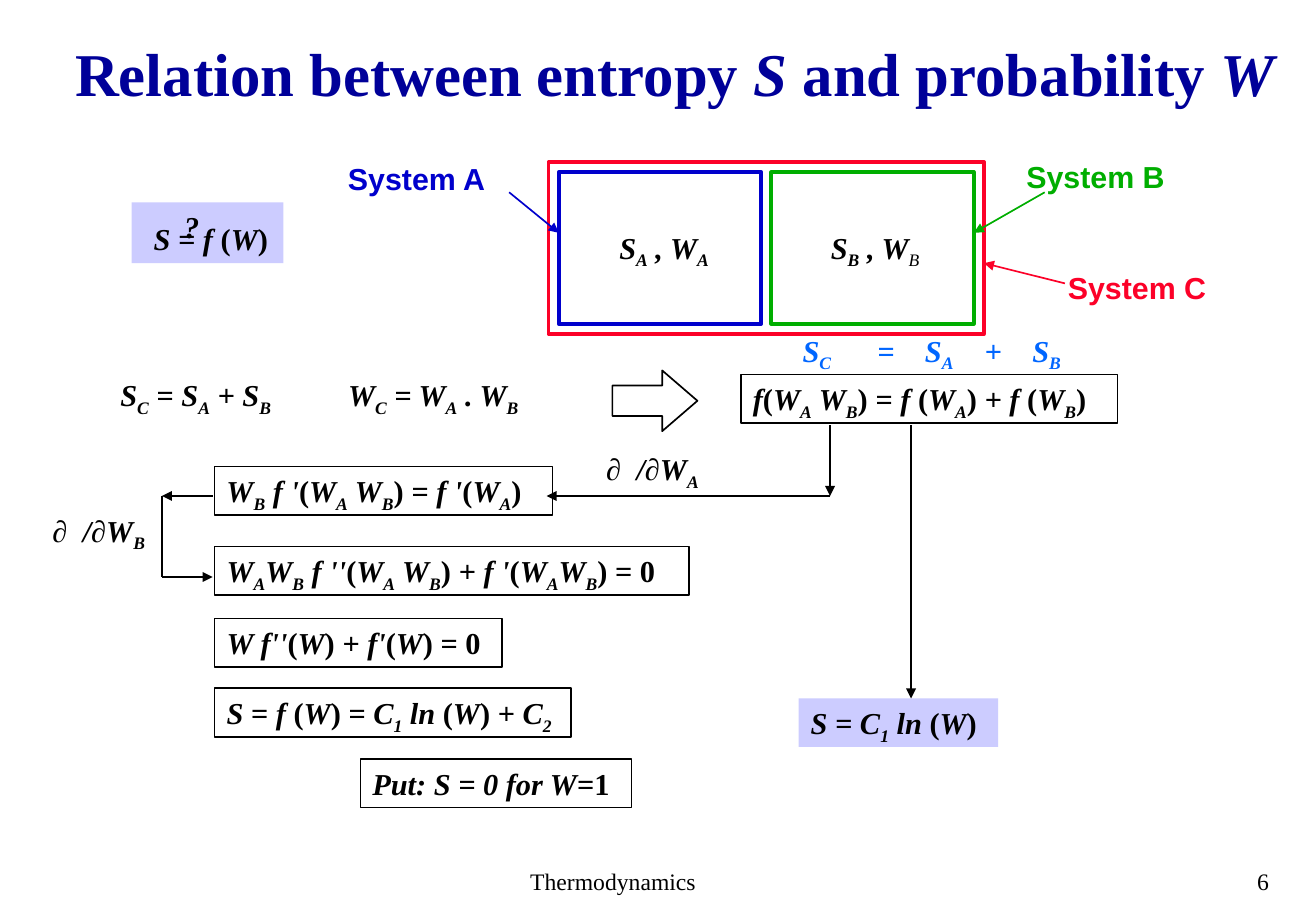
from dataclasses import dataclass
from typing import Optional

from lxml import etree
from pptx import Presentation
from pptx.dml.color import RGBColor
from pptx.enum.shapes import MSO_CONNECTOR, MSO_SHAPE
from pptx.enum.text import MSO_ANCHOR, MSO_AUTO_SIZE, PP_ALIGN
from pptx.oxml.ns import qn
from pptx.util import Inches, Pt

RECTANGLE, RIGHT_ARROW = MSO_SHAPE.RECTANGLE, MSO_SHAPE.RIGHT_ARROW
STRAIGHT = MSO_CONNECTOR.STRAIGHT
LEFT, CENTER = PP_ALIGN.LEFT, PP_ALIGN.CENTER
TOP, MIDDLE = MSO_ANCHOR.TOP, MSO_ANCHOR.MIDDLE
FIT_SHAPE = MSO_AUTO_SIZE.SHAPE_TO_FIT_TEXT

COLUMNS, ROWS = 130, 90  # twelve grid cells to the inch
LINE_ROWS = 4.8  # height of one line of 18 pt text with its margins
SERIF, SANS = "Times New Roman", "Arial"
BLACK, NAVY, LILAC, SKY = "000000", "000099", "CCCCFF", "0066FF"
BLUE, GREEN, RED = "0000CC", "00AE00", "FC0128"


@dataclass
class Box:
    column: float
    row: float
    width: float
    height: float = LINE_ROWS
    line: Optional[str] = None
    fill: Optional[str] = None
    weight: float = 1


@dataclass
class Formula:
    """Text in the markup of add_runs, with tab stops in cells."""
    text: str
    box: Box
    color: str = BLACK
    tabs: tuple[float, ...] = ()


@dataclass
class SystemLabel:
    text: str
    box: Box
    color: str


@dataclass
class Link:
    start: tuple[float, float]
    end: tuple[float, float]
    color: str = BLACK
    arrow: bool = True


FRAMES = [
    Box(55.2, 17, 20, 15, BLUE, weight=2.25),
    Box(76.2, 17, 20, 15, GREEN, weight=2.25),
    Box(54.2, 16, 43, 17, RED, weight=2.25),
]
QUESTION_PATCH = Box(13, 20, 15, 6, fill=LILAC)
IMPLIES_ARROW = Box(60.5, 36.6, 8.4, 6, BLACK)

SYSTEM_LABELS = [
    SystemLabel("System A", Box(33.2, 15.2, 16.1), BLUE),
    SystemLabel("System B", Box(100.2, 15, 16.2), GREEN),
    SystemLabel("System C", Box(104.3, 26, 16.2), RED),
]

FORMULAS = [
    Formula("S_A , W_A", Box(60, 22, 11.5)),
    Formula("S_B , W~B", Box(80.9, 22, 11.8)),
    Formula("W_C = W_A . W_B", Box(33.2, 36.6, 20.8)),
    Formula("S_C = S_A + S_B", Box(10.7, 36.6, 18.1)),
    Formula("S = f [(]W[)]", Box(14, 21.2, 14.2)),
    Formula("?", Box(17, 20, 4)),
    Formula("f[(]W_A W_B[) ]= f [(]W_A[)] + f [(]W_B[)]", Box(73.2, 37, 37.2, line=BLACK)),
    Formula("W_B f '[(]W_A W_B[) ]= f '[(]W_A[)]", Box(21.2, 46.1, 33.4, line=BLACK)),
    Formula("W_AW_B f ''[(]W_A W_B[) ]+ f '[(]W_AW_B[) = 0]", Box(21.2, 54, 46.9, line=BLACK)),
    Formula("W f''[(]W[) ]+ f'[(]W[) = 0]", Box(21.2, 61.1, 28.4, line=BLACK)),
    Formula("S = f [(]W[)] = C_1 ln [(]W[) ]+ C_2", Box(21.2, 68, 35.2, line=BLACK)),
    Formula("S = C_1 ln [(]W[)]", Box(78.9, 69, 19.7, fill=LILAC)),
    Formula("Put: S = 0 for W[=1]", Box(35.6, 75, 26.8, line=BLACK)),
    Formula("∂\t/∂W_A", Box(58.7, 43.9, 11.9), tabs=(3,)),
    Formula("∂\t/∂W_B", Box(4, 50, 12.1), tabs=(3,)),
    Formula("S_C\t=\tS_A\t+\tS_B", Box(78.1, 32.2, 29.3), SKY, (7.4, 12.1, 18, 22.7)),
]

LINKS = [
    Link((50.3, 19), (55.2, 23), BLUE),
    Link((103.2, 19), (96.2, 23), GREEN),
    Link((105.2, 28), (97.2, 26), RED),
    Link((82, 42), (82, 49)),
    Link((82, 49), (54, 49)),
    Link((21, 49), (16, 49)),
    Link((16, 49), (16, 57), arrow=False),
    Link((16, 57), (21, 57)),
    Link((90, 42), (90, 69)),
]


def cells(count: float) -> int:
    return Inches(count / 12)


def rgb(color: str) -> RGBColor:
    return RGBColor.from_string(color)


def add_box(slide, box: Box, kind=RECTANGLE):
    shape = slide.shapes.add_shape(
        kind, cells(box.column), cells(box.row), cells(box.width), cells(box.height))
    shape.shadow.inherit = False
    if box.fill:
        shape.fill.solid()
        shape.fill.fore_color.rgb = rgb(box.fill)
    else:
        shape.fill.background()
    if box.line:
        shape.line.color.rgb = rgb(box.line)
        shape.line.width = Pt(box.weight)
    else:
        shape.line.fill.background()
    return shape


def add_runs(paragraph, markup: str, italic: bool, bold: bool, size: float,
             font: str, color: str) -> None:
    """Brackets hold upright text, _x is a subscript and ~x a light subscript."""
    pieces: list[tuple[str, bool, str]] = []
    slanted, mark = italic, ""
    for letter in markup:
        if letter in "[]":
            slanted = letter == "]"
        elif letter in "_~":
            mark = letter
        else:
            if pieces and pieces[-1][1:] == (slanted, mark):
                pieces[-1] = (pieces[-1][0] + letter, slanted, mark)
            else:
                pieces.append((letter, slanted, mark))
            mark = ""
    for text, slanted, mark in pieces:
        run = paragraph.add_run()
        run.text = text
        run.font.name, run.font.size = font, Pt(size)
        run.font.bold, run.font.italic = bold and mark != "~", slanted
        run.font.color.rgb = rgb(color)
        if mark:
            run._r.get_or_add_rPr().set("baseline", "-25000")


def add_text(slide, text: str, box: Box, *, italic: bool = False, bold: bool = True,
             size: float = 18, font: str = SERIF, color: str = BLACK, align=LEFT,
             anchor=TOP, spacing: float = 1, tabs: tuple[float, ...] = ()) -> None:
    if box.line or box.fill:
        shape = add_box(slide, box)
    else:
        shape = slide.shapes.add_textbox(
            cells(box.column), cells(box.row), cells(box.width), cells(box.height))
    frame = shape.text_frame
    frame.word_wrap = False
    frame.auto_size = FIT_SHAPE
    frame.vertical_anchor = anchor
    paragraph = frame.paragraphs[0]
    paragraph.alignment = align
    paragraph.line_spacing = spacing
    if tabs:
        tab_list = etree.SubElement(paragraph._p.get_or_add_pPr(), qn("a:tabLst"))
        for stop in tabs:
            etree.SubElement(tab_list, qn("a:tab"), pos=str(cells(stop)), algn="l")
    add_runs(paragraph, text, italic, bold, size, font, color)


def add_link(slide, link: Link) -> None:
    connector = slide.shapes.add_connector(
        STRAIGHT, *(cells(value) for value in link.start + link.end))
    connector.line.color.rgb = rgb(link.color)
    connector.line.width = Pt(1)
    if link.arrow:
        etree.SubElement(connector.line._get_or_add_ln(), qn("a:tailEnd"), type="triangle")
    etree.SubElement(connector._element.spPr, qn("a:effectLst"))


def main() -> None:
    presentation = Presentation()
    presentation.slide_width, presentation.slide_height = cells(COLUMNS), cells(ROWS)
    slide = presentation.slides.add_slide(presentation.slide_layouts[6])

    add_text(slide, "[Relation between entropy ]S[ and probability ]W",
             Box(5.4, 3.7, 122.5, 7.7), size=36, color=NAVY, align=CENTER,
             anchor=MIDDLE, spacing=0.9)
    for frame in FRAMES:
        add_box(slide, frame)
    add_box(slide, QUESTION_PATCH)
    add_box(slide, IMPLIES_ARROW, RIGHT_ARROW).adjustments[1] = 0.58
    for label in SYSTEM_LABELS:
        add_text(slide, label.text, label.box, font=SANS, color=label.color)
    for formula in FORMULAS:
        add_text(slide, formula.text, formula.box, italic=True,
                 color=formula.color, tabs=formula.tabs)
    for link in LINKS:
        add_link(slide, link)
    add_text(slide, "Thermodynamics", Box(51.2, 85, 19, 4), bold=False, size=14)
    add_text(slide, "6", Box(123, 85, 5.2, 4), bold=False, size=14)
    presentation.save("out.pptx")


if __name__ == "__main__":
    main()
